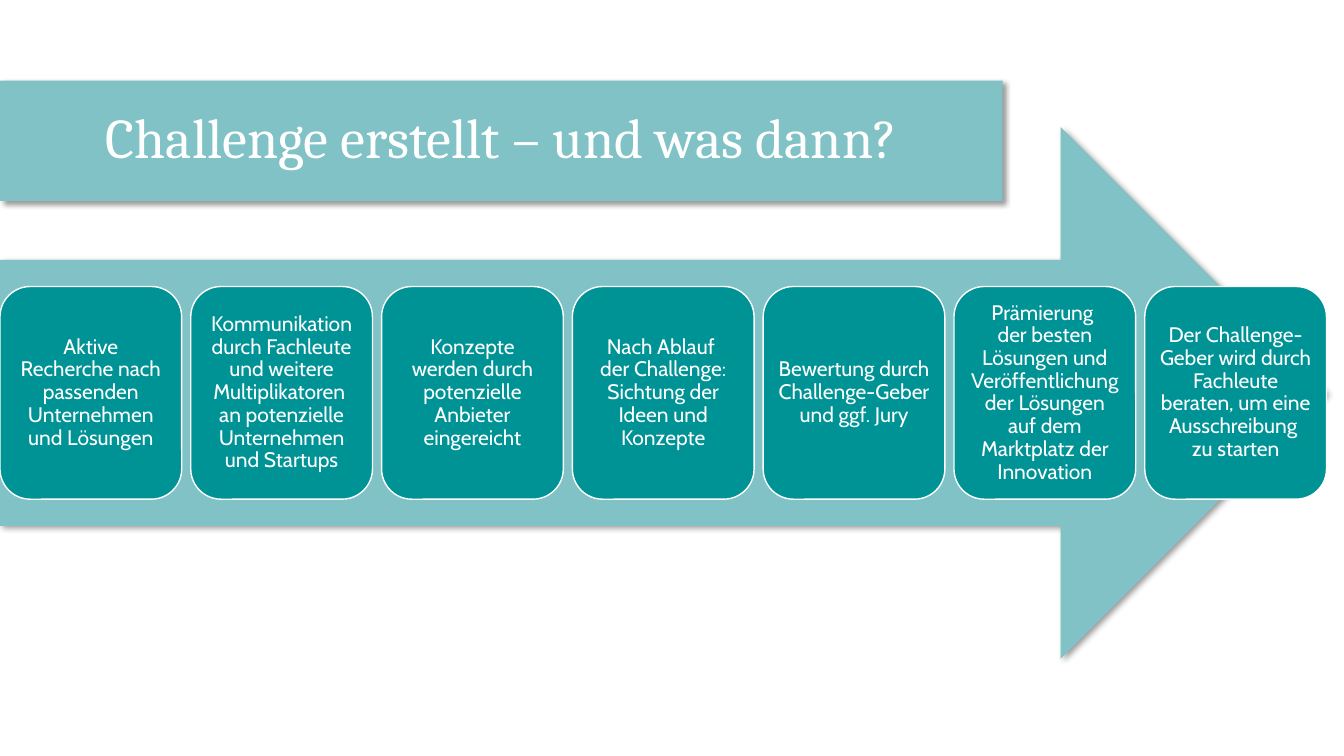
from lxml.etree import SubElement
from pptx import Presentation
from pptx.dml.color import RGBColor
from pptx.enum.shapes import MSO_SHAPE
from pptx.enum.text import MSO_ANCHOR, MSO_AUTO_SIZE, PP_ALIGN
from pptx.oxml.ns import qn
from pptx.util import Cm, Pt

# Content
TITLE = "Challenge erstellt – und was dann?"
STEPS = [
    "Aktive Recherche nach passenden Unternehmen und Lösungen",
    "Kommunikation durch Fachleute und weitere Multiplikatoren \n"
    "an potenzielle Unternehmen und Startups",
    "Konzepte werden durch potenzielle Anbieter eingereicht",
    "Nach Ablauf \nder Challenge: Sichtung der Ideen und Konzepte",
    "Bewertung durch Challenge-Geber und ggf. Jury",
    "Prämierung \nder besten Lösungen und Veröffentlichung der Lösungen "
    "auf dem Marktplatz der Innovation",
    "Der Challenge-Geber wird durch Fachleute beraten, um eine Ausschreibung \nzu starten",
]

# Formats
LIGHT_TEAL, TEAL, WHITE, BLACK = "80C2C5", "009396", "FFFFFF", "000000"
TITLE_FONT = {"name": "Cambria", "size": Pt(40)}
STEP_FONT = {"name": "Cabin", "size": Pt(15)}
FRAME = {"word_wrap": True, "auto_size": MSO_AUTO_SIZE.NONE,
         "vertical_anchor": MSO_ANCHOR.MIDDLE}
STEP_MARGINS = {f"margin_{side}": Cm(0.15) for side in ("left", "top", "right", "bottom")}

# Layout in centimetres
ARROW_TOP, ARROW_WIDTH, ARROW_HEIGHT = 3.2, 33.43, 13.4
STEP_WIDTH, STEP_HEIGHT = 4.58, 5.36
STEP_PITCH = (ARROW_WIDTH - STEP_WIDTH) / (len(STEPS) - 1)
STEP_TOP = ARROW_TOP + (ARROW_HEIGHT - STEP_HEIGHT) / 2


def color(value):
    return RGBColor.from_string(value)


def apply(target, values):
    for name, value in values.items():
        setattr(target, name, value)


def fill_shape(shape, fill, line=None):
    shape.fill.solid()
    shape.fill.fore_color.rgb = color(fill)
    if line:
        shape.line.color.rgb = color(line)
        shape.line.width = Pt(1)
    else:
        shape.line.fill.background()


def add_shadow(shape):
    effects = SubElement(shape._element.spPr, qn("a:effectLst"))
    shadow = SubElement(effects, qn("a:outerShdw"), blurRad=str(Pt(4)),
                        dist=str(Pt(3)), dir=str(45 * 60000), algn="tl", rotWithShape="0")
    shade = SubElement(shadow, qn("a:srgbClr"), val=BLACK)
    SubElement(shade, qn("a:alpha"), val="40000")


def write_text(shape, text, font_values, margins=None):
    frame = shape.text_frame
    apply(frame, {**FRAME, **(margins or {})})
    paragraph = frame.paragraphs[0]
    paragraph.text = text.replace("\n", "\v")
    paragraph.alignment = PP_ALIGN.CENTER
    paragraph.line_spacing = 0.9
    for font in [paragraph.font] + [run.font for run in paragraph.runs]:
        apply(font, font_values)
        font.color.rgb = color(WHITE)


def main():
    presentation = Presentation()
    apply(presentation, {"slide_width": Cm(33.87), "slide_height": Cm(19.05)})
    slide = presentation.slides.add_slide(presentation.slide_layouts[5])

    # Title band
    title = slide.shapes.title
    apply(title, {"left": 0, "top": Cm(2.03), "width": Cm(25.27), "height": Cm(3.03)})
    fill_shape(title, LIGHT_TEAL)
    add_shadow(title)
    write_text(title, TITLE, TITLE_FONT)

    # Process arrow
    arrow = slide.shapes.add_shape(MSO_SHAPE.RIGHT_ARROW, 0, Cm(ARROW_TOP),
                                   Cm(ARROW_WIDTH), Cm(ARROW_HEIGHT))
    fill_shape(arrow, LIGHT_TEAL)
    add_shadow(arrow)

    # Steps spread evenly along the arrow
    for index, text in enumerate(STEPS):
        step = slide.shapes.add_shape(MSO_SHAPE.ROUNDED_RECTANGLE, Cm(index * STEP_PITCH),
                                      Cm(STEP_TOP), Cm(STEP_WIDTH), Cm(STEP_HEIGHT))
        fill_shape(step, TEAL, WHITE)
        step.shadow.inherit = False
        write_text(step, text, STEP_FONT, STEP_MARGINS)

    presentation.save("out.pptx")


if __name__ == "__main__":
    main()
